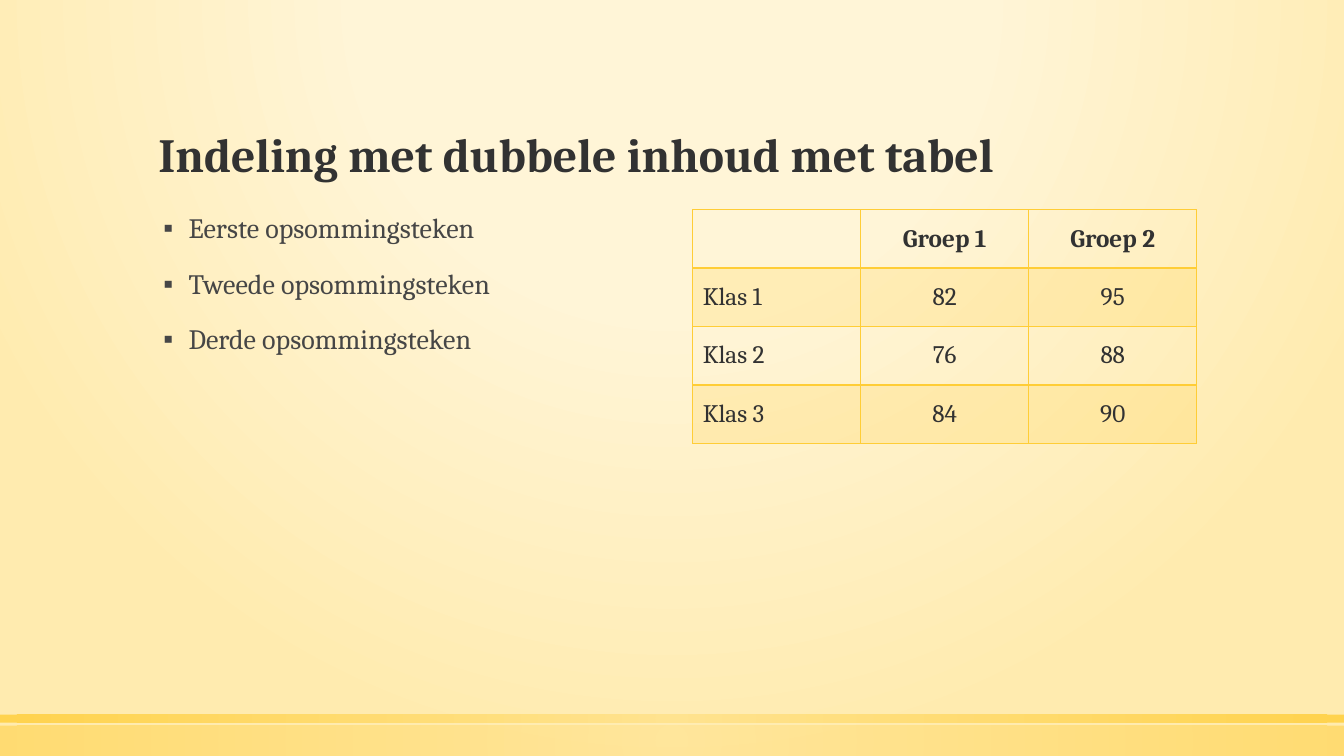
from lxml import etree
from pptx import Presentation
from pptx.dml.color import RGBColor
from pptx.enum.text import MSO_ANCHOR, MSO_AUTO_SIZE, PP_ALIGN
from pptx.oxml.ns import qn
from pptx.util import Emu, Inches, Pt

CENTER, LEFT = PP_ALIGN.CENTER, PP_ALIGN.LEFT
MIDDLE, TOP, BOTTOM = MSO_ANCHOR.MIDDLE, MSO_ANCHOR.TOP, MSO_ANCHOR.BOTTOM
NO_AUTOFIT = MSO_AUTO_SIZE.NONE

COLORS = {
    "heading": "323232",
    "bullet": "464646",
    "gold": "FFCD36",
    "light_gold": "FFE186",
    "cream": "FFF5D7",
    "sand": "FFEBAF",
}
FONT = "Cambria"
WIDTH, HEIGHT = Inches(13.33), Inches(7.5)
MARGIN, COLUMN, GUTTER = Inches(1.47), Inches(5), Inches(0.4)
CONTENT_TOP = Inches(2.08)
ROW_HEIGHT = Inches(0.58)
TWO_CONTENT_LAYOUT = 3

TITLE = "Indeling met dubbele inhoud met tabel"
BULLETS = ["Eerste opsommingsteken", "Tweede opsommingsteken", "Derde opsommingsteken"]
SCORES = [
    ["", "Groep 1", "Groep 2"],
    ["Klas 1", "82", "95"],
    ["Klas 2", "76", "88"],
    ["Klas 3", "84", "90"],
]


def add_child(parent, tag, **attributes):
    values = {name: str(value) for name, value in attributes.items()}
    return etree.SubElement(parent, qn(tag), values)


def add_color(parent, color, opacity=100):
    rgb = add_child(parent, "a:srgbClr", val=COLORS[color])
    if opacity < 100:
        add_child(rgb, "a:alpha", val=opacity * 1000)


def set_radial_gradient(properties, stops, top=50, bottom=50):
    gradient = properties.find(qn("a:gradFill"))
    for child in list(gradient):
        gradient.remove(child)
    stop_list = add_child(gradient, "a:gsLst")
    for position, color, opacity in stops:
        stop = add_child(stop_list, "a:gs", pos=position * 1000)
        add_color(stop, color, opacity)
    circle = add_child(gradient, "a:path", path="circle")
    add_child(circle, "a:fillToRect", l=50000, t=top * 1000, r=50000, b=bottom * 1000)


def paint_background(slide):
    slide.background.fill.gradient()
    properties = slide.element.xpath("p:cSld/p:bg/p:bgPr")[0]
    stops = [(0, "cream", 59), (40, "cream", 66), (100, "sand", 100)]
    set_radial_gradient(properties, stops, top=-80, bottom=180)


def add_footer_band(slide, rectangle, top, height, opacity):
    band = slide.shapes.add_shape(rectangle, 0, top, WIDTH, height)
    band.shadow.inherit = False
    band.line.fill.background()
    band.fill.gradient()
    stops = [(0, "light_gold", opacity), (100, "gold", opacity)]
    set_radial_gradient(band.element.spPr, stops)
    slide.shapes.element.insert(2, band.element)


def place(placeholder, left, top, width, height, anchor):
    placeholder.left, placeholder.top = left, top
    placeholder.width, placeholder.height = width, height
    frame = placeholder.text_frame
    frame.auto_size = NO_AUTOFIT
    frame.word_wrap = True
    frame.vertical_anchor = anchor
    return frame


def write(paragraph, text, size, color, bold=False, align=LEFT):
    paragraph.alignment = align
    run = paragraph.add_run()
    run.text = text
    run.font.name = FONT
    run.font.size = Pt(size)
    run.font.bold = bold
    run.font.color.rgb = RGBColor.from_string(COLORS[color])


def fill_title(placeholder):
    frame = place(placeholder, MARGIN, Inches(0.51), Inches(10.4), Inches(1.35), BOTTOM)
    heading = frame.paragraphs[0]
    heading.line_spacing = 0.9
    write(heading, TITLE, 34, "heading", bold=True)


def fill_bullets(placeholder):
    frame = place(placeholder, MARGIN, CONTENT_TOP, COLUMN, Inches(4.51), TOP)
    for index, text in enumerate(BULLETS):
        item = frame.add_paragraph() if index else frame.paragraphs[0]
        item.line_spacing = 0.9
        item.space_before = Pt(18)
        write(item, text, 20, "bullet")
        properties = item._p.get_or_add_pPr()
        properties.set("marL", str(Inches(0.3)))
        properties.set("indent", str(-Inches(0.25)))
        add_child(properties, "a:buFont", typeface="Arial")
        add_child(properties, "a:buChar", char="▪")


def style_cell(cell, borders, shaded):
    properties = cell._tc.get_or_add_tcPr()
    for side, points in borders.items():
        line = add_child(properties, f"a:ln{side}", w=Pt(points))
        add_color(add_child(line, "a:solidFill"), "gold")
    if shaded:
        add_color(add_child(properties, "a:solidFill"), "gold", 20)
    else:
        add_child(properties, "a:noFill")


def add_score_table(slide):
    rows, columns = len(SCORES), len(SCORES[0])
    left = MARGIN + COLUMN + GUTTER
    frame = slide.shapes.add_table(rows, columns, left, CONTENT_TOP, COLUMN, rows * ROW_HEIGHT)
    table = frame.table
    table.first_row = True
    table.horz_banding = False
    for column in table.columns:
        column.width = Emu(COLUMN // columns)
    for r, values in enumerate(SCORES):
        borders = {"L": 1, "R": 1, "T": 2 if r == 1 else 1, "B": 2 if r == 0 else 1}
        for c, value in enumerate(values):
            cell = table.cell(r, c)
            cell.vertical_anchor = MIDDLE
            style_cell(cell, borders, shaded=r % 2 == 1)
            if value:
                align = CENTER if c else LEFT
                write(cell.text_frame.paragraphs[0], value, 18, "heading", r == 0, align)


def main():
    from pptx.enum.shapes import MSO_SHAPE

    presentation = Presentation()
    presentation.slide_width, presentation.slide_height = WIDTH, HEIGHT
    slide = presentation.slides.add_slide(presentation.slide_layouts[TWO_CONTENT_LAYOUT])
    title, bullets, spare = slide.placeholders
    spare.element.getparent().remove(spare.element)

    paint_background(slide)
    add_footer_band(slide, MSO_SHAPE.RECTANGLE, Inches(7.09), Inches(0.08), 80)
    add_footer_band(slide, MSO_SHAPE.RECTANGLE, Inches(7.2), Inches(0.3), 50)
    fill_title(title)
    fill_bullets(bullets)
    add_score_table(slide)
    presentation.save("out.pptx")


if __name__ == "__main__":
    main()
